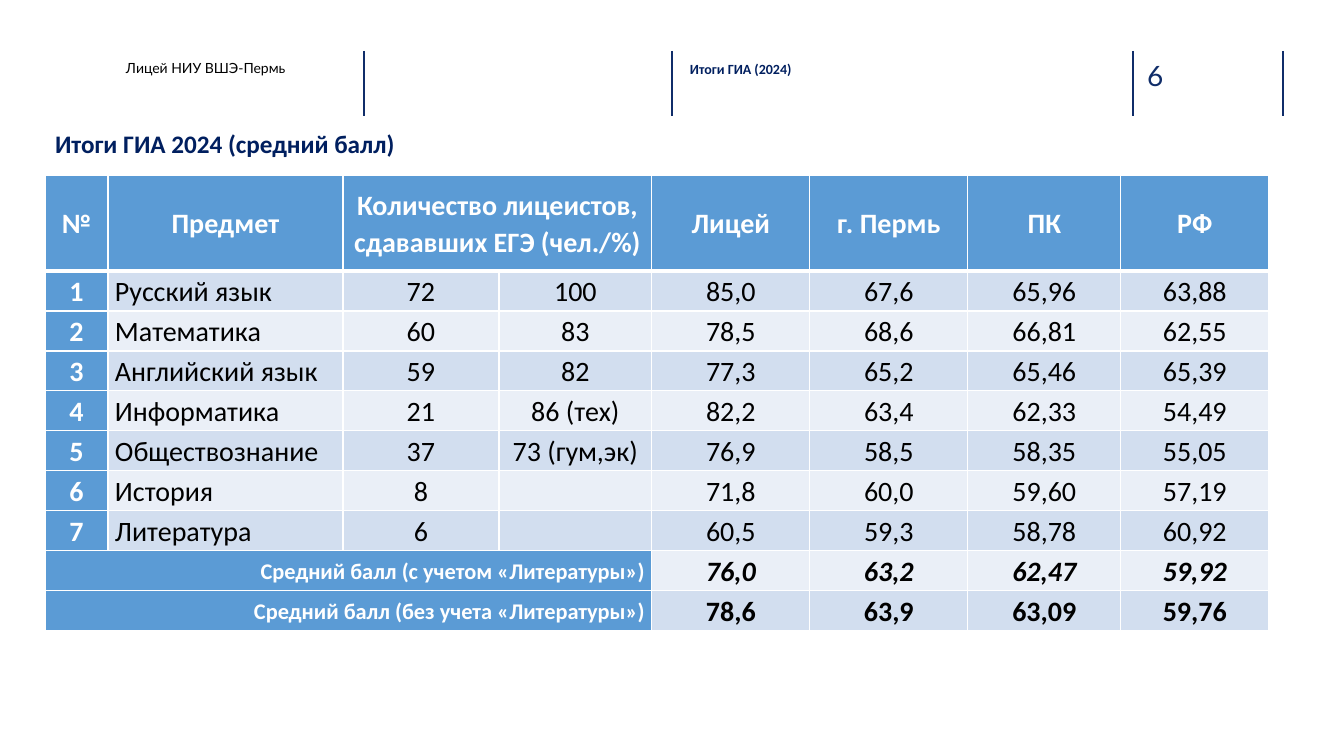
from pptx import Presentation
from pptx.dml.color import RGBColor
from pptx.enum.shapes import MSO_CONNECTOR
from pptx.enum.text import MSO_ANCHOR, MSO_AUTO_SIZE, PP_ALIGN
from pptx.oxml.ns import qn
from pptx.util import Pt
from lxml.etree import SubElement

SCALE = 914400 / 100.8  # EMU in one px
COLORS = {"rule": "102D69", "navy": "001F5F", "black": "000000", "white": "FFFFFF",
          "blue": "5B9BD5", "odd": "D2DEEF", "even": "EAEFF7"}

HEADS = ["№", "Предмет", "Количество лицеистов, сдававших ЕГЭ (чел./%)", "",
         "Лицей", "г. Пермь", "ПК", "РФ"]
MARKS = [
    ["Русский язык", "72", "100", "85,0", "67,6", "65,96", "63,88"],
    ["Математика", "60", "83", "78,5", "68,6", "66,81", "62,55"],
    ["Английский язык", "59", "82", "77,3", "65,2", "65,46", "65,39"],
    ["Информатика", "21", "86 (тех)", "82,2", "63,4", "62,33", "54,49"],
    ["Обществознание", "37", "73 (гум,эк)", "76,9", "58,5", "58,35", "55,05"],
    ["История", "8", "", "71,8", "60,0", "59,60", "57,19"],
    ["Литература", "6", "", "60,5", "59,3", "58,78", "60,92"],
]
MEANS = [
    ["Средний балл (с учетом «Литературы»)", "", "", "", "76,0", "63,2", "62,47", "59,92"],
    ["Средний балл (без учета «Литературы»)", "", "", "", "78,6", "63,9", "63,09", "59,76"],
]


def px(num):
    return round(num * SCALE)


def rgb(name):
    return RGBColor.from_string(COLORS[name])


class Page:
    def __init__(self, deck, layout):
        self.slide = deck.slides.add_slide(layout)
        self.base = {"name": "Calibri", "bold": False, "italic": False}

    def words(self, frame, text, size, color, align=PP_ALIGN.LEFT, space=1.0, **more):
        para = frame.paragraphs[0]
        for key, val in {"alignment": align, "line_spacing": space,
                         "space_before": Pt(0)}.items():
            setattr(para, key, val)
        run = para.add_run()
        run.text = text
        for key, val in {**self.base, "size": Pt(size), **more}.items():
            setattr(run.font, key, val)
        run.font.color.rgb = rgb(color)

    def place(self, shape, box, pads, text, size, color, **more):
        shape.left, shape.top, shape.width, shape.height = map(px, box)
        frame = shape.text_frame
        side, edge = map(px, pads)
        form = {"word_wrap": True, "auto_size": MSO_AUTO_SIZE.NONE,
                "vertical_anchor": MSO_ANCHOR.TOP, "margin_left": side,
                "margin_right": side, "margin_top": edge, "margin_bottom": edge}
        for key, val in form.items():
            setattr(frame, key, val)
        self.words(frame, text, size, color, **more)

    def holder(self, idx, *args, **more):
        self.place(self.slide.placeholders[idx], *args, **more)

    def label(self, *args, **more):
        self.place(self.slide.shapes.add_textbox(0, 0, 0, 0), *args, **more)

    def rule(self, left, top, end):
        line = self.slide.shapes.add_connector(
            MSO_CONNECTOR.STRAIGHT, px(left), px(top), px(left), px(end))
        line.line.color.rgb = rgb("rule")
        line.line.width = Pt(1)
        SubElement(line._element.spPr, qn("a:effectLst"))

    def grid(self, left, top, cols, rows):
        frame = self.slide.shapes.add_table(len(rows), len(cols), px(left), px(top),
                                            px(sum(cols)), px(sum(rows)))
        table = frame.table
        table.first_row = table.horz_banding = False
        for col, wide in zip(table.columns, cols):
            col.width = px(wide)
        for row, high in zip(table.rows, rows):
            row.height = px(high)
        return table

    def cell(self, cell, fill, edges, text, *args, **more):
        for side, width in edges.items():
            edge = SubElement(cell._tc.get_or_add_tcPr(), qn(f"a:ln{side}"), w=str(Pt(width)))
            solid = SubElement(edge, qn("a:solidFill"))
            SubElement(solid, qn("a:srgbClr"), val=COLORS["white"])
        cell.fill.solid()
        cell.fill.fore_color.rgb = rgb(fill)
        form = {"vertical_anchor": MSO_ANCHOR.MIDDLE, "margin_left": px(7),
                "margin_right": px(7), "margin_top": 0, "margin_bottom": 0}
        for key, val in form.items():
            setattr(cell, key, val)
        if text:
            self.words(cell.text_frame, text, *args, space=1.07, **more)

    def drop(self, *idxs):
        for idx in idxs:
            item = self.slide.placeholders[idx]._element
            item.getparent().remove(item)


def main():
    deck = Presentation()
    deck.slide_width, deck.slide_height = px(1344), px(756)
    page = Page(deck, deck.slide_layouts[4])
    page.drop(2, 4)

    # Header strip
    for left in (364, 672, 1133, 1283):
        page.rule(left, 51, 116)
    page.label((1147, 58, 74, 34), (0, 0), "6", 20, "rule", name="Lato")
    page.holder(1, (126, 59, 210, 45), (0, 0), "Лицей НИУ ВШЭ-Пермь", 10, "black", name="Lato")
    page.holder(3, (690, 60, 228, 45), (0, 0), "Итоги ГИА (2024)", 10, "navy", bold=True)

    # Title
    page.holder(0, (45, 123, 1188, 40), (10, 5), "Итоги ГИА 2024 (средний балл)",
                18, "navy", bold=True)

    # Score table
    body = [[str(num), *row] for num, row in enumerate(MARKS, 1)]
    data = [HEADS, *body, *MEANS]
    first = len(data) - len(MEANS)
    table = page.grid(45, 175, [63, 235, 156, 153, 158, 158, 153, 148],
                      [96] + [40] * (len(data) - 1))
    for r, row in enumerate(data):
        mean = r >= first
        edges = {"L": 1, "R": 1, "T": 3 if r == 1 else 1, "B": 3 if r == 0 else 1}
        for c, text in enumerate(row):
            head = r == 0 or c == 0 or (mean and c < 4)
            align = PP_ALIGN.CENTER
            if mean and c == 0:
                align = PP_ALIGN.RIGHT
            elif c == 1 and r > 0:
                align = PP_ALIGN.LEFT
            page.cell(table.cell(r, c), "blue" if head else "odd" if r % 2 else "even",
                      edges, text, 16 if mean and c == 0 else 20,
                      "white" if head else "black", align=align,
                      bold=head or mean, italic=r == first and not head)

    # Merged cells
    table.cell(0, 2).merge(table.cell(0, 3))
    for r in range(first, len(data)):
        table.cell(r, 0).merge(table.cell(r, 3))

    deck.save("out.pptx")


if __name__ == "__main__":
    main()
